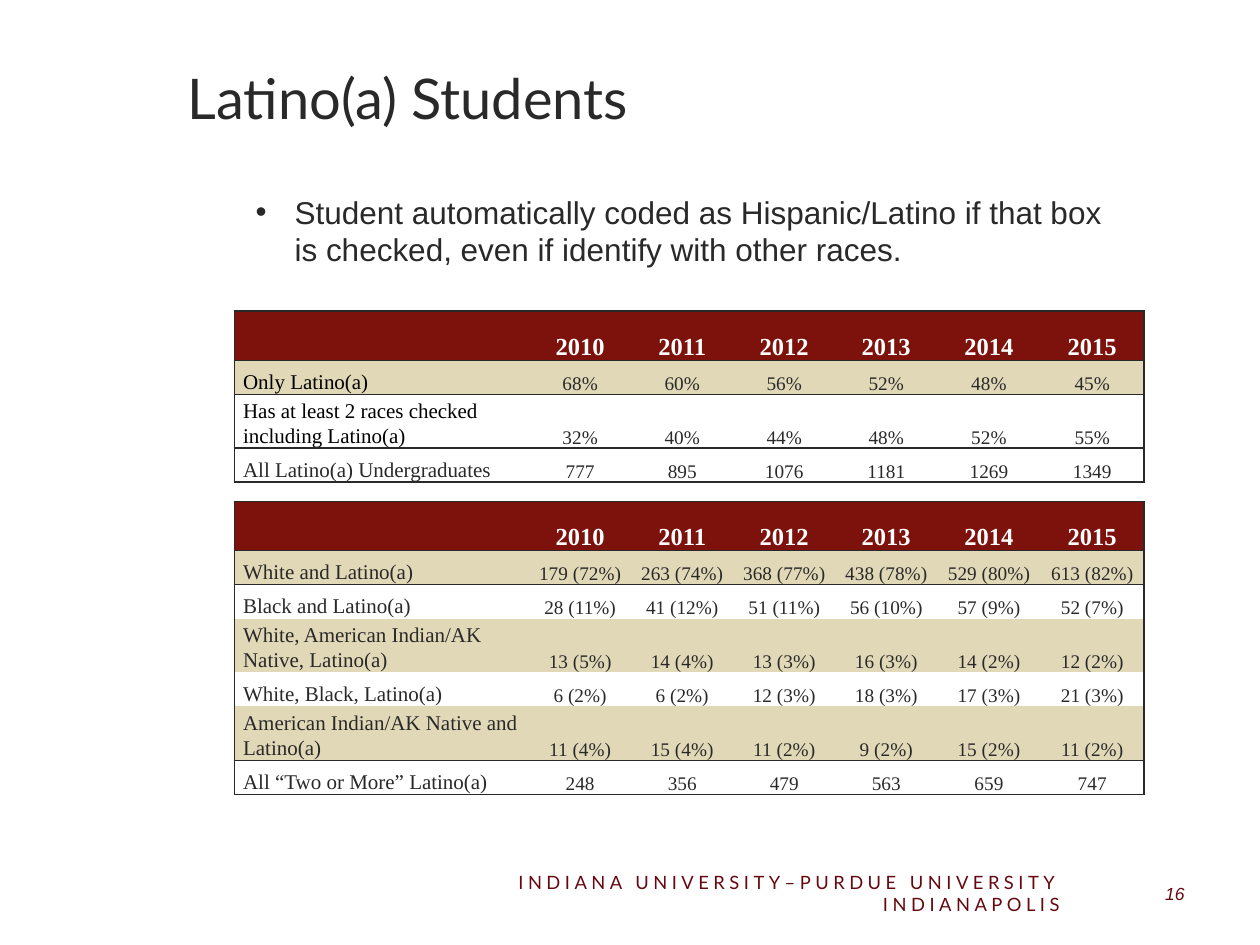
import pptx
import pptx.util
import pptx.dml.color
import pptx.enum.text
import pptx.oxml
import pptx.oxml.ns

Inches, Pt = pptx.util.Inches, pptx.util.Pt
RGBColor = pptx.dml.color.RGBColor
ALIGN, ANCHOR = pptx.enum.text.PP_ALIGN, pptx.enum.text.MSO_ANCHOR

INK = RGBColor(0x29, 0x29, 0x29)
BLACK = RGBColor(0, 0, 0)
WHITE = RGBColor(0xFF, 0xFF, 0xFF)
CRIMSON = RGBColor(0x7D, 0x11, 0x0C)
MAROON = RGBColor(0x66, 0x08, 0x0F)
TAN = RGBColor(0xE1, 0xD8, 0xB7)

TITLE = "Latino(a) Students"
BULLET = ("Student automatically coded as Hispanic/Latino if that box is checked, "
          "even if identify with other races.")
FOOTER = "INDIANA UNIVERSITY–PURDUE UNIVERSITY INDIANAPOLIS"
PAGE = "16"

HEADER = ["", "2010", "2011", "2012", "2013", "2014", "2015"]
ALL_LATINO = [
    HEADER,
    ["Only Latino(a)", "68%", "60%", "56%", "52%", "48%", "45%"],
    ["Has at least 2 races checked including Latino(a)",
     "32%", "40%", "44%", "48%", "52%", "55%"],
    ["All Latino(a) Undergraduates", "777", "895", "1076", "1181", "1269", "1349"],
]
TWO_OR_MORE = [
    HEADER,
    ["White and Latino(a)", "179 (72%)", "263 (74%)", "368 (77%)",
     "438 (78%)", "529 (80%)", "613 (82%)"],
    ["Black and Latino(a)", "28 (11%)", "41 (12%)", "51 (11%)",
     "56 (10%)", "57 (9%)", "52 (7%)"],
    ["White, American Indian/AK Native, Latino(a)", "13 (5%)", "14 (4%)", "13 (3%)",
     "16 (3%)", "14 (2%)", "12 (2%)"],
    ["White, Black, Latino(a)", "6 (2%)", "6 (2%)", "12 (3%)",
     "18 (3%)", "17 (3%)", "21 (3%)"],
    ["American Indian/AK Native and Latino(a)", "11 (4%)", "15 (4%)", "11 (2%)",
     "9 (2%)", "15 (2%)", "11 (2%)"],
    ["All “Two or More” Latino(a)", "248", "356", "479", "563", "659", "747"],
]
COLS = [2.34] + [0.81] * 4 + [0.82] * 2
HEADER_H, ROW_H = 0.39, 0.27
NO_STYLE = "{2D5ABB26-0587-4C30-8999-92F81FD0307C}"
NS = pptx.oxml.ns.nsdecls("a")


def xml(text):
    return pptx.oxml.parse_xml(text.replace(">", f" {NS}>", 1))


def write(tf, text, size, font, color, align=ALIGN.LEFT, anchor=ANCHOR.TOP,
          bold=False, italic=False, line=None):
    tf.word_wrap = True
    tf.vertical_anchor = anchor
    p = tf.paragraphs[0]
    p.alignment = align
    if line:
        p.line_spacing = line
    r = p.add_run()
    r.text = text
    r.font.size, r.font.name = Pt(size), font
    r.font.bold, r.font.italic = bold, italic
    r.font.color.rgb = color
    return p, r


def add_text(s, box, text, size, font, color, **fmt):
    sp = s.shapes.add_textbox(*map(Inches, box))
    return write(sp.text_frame, text, size, font, color, **fmt)


def add_borders(cell, sides):
    tcPr = cell._tc.get_or_add_tcPr()
    for side in "LRTB":
        if side in sides:
            tcPr.append(xml(f'<a:ln{side} w="12700"><a:solidFill><a:srgbClr val="{INK}"/>'
                            f'</a:solidFill></a:ln{side}>'))


def add_grid(s, top, rows, black_rows=()):
    last, end = len(rows) - 1, len(COLS) - 1
    heights = [HEADER_H] + [ROW_H] * last
    frame = s.shapes.add_table(len(rows), len(COLS), Inches(1.86), Inches(top),
                               Inches(sum(COLS)), Inches(sum(heights)))
    table = frame.table
    table._tbl.tblPr.find(pptx.oxml.ns.qn("a:tableStyleId")).text = NO_STYLE
    for col, width in zip(table.columns, COLS):
        col.width = Inches(width)
    for i, values in enumerate(rows):
        table.rows[i].height = Inches(heights[i])
        sides = ("T" if i in (0, 1, last) else "") + ("B" if i in (0, last - 1, last) else "")
        for j, value in enumerate(values):
            cell = table.cell(i, j)
            cell.margin_left = cell.margin_right = Inches(0.07)
            cell.margin_top = cell.margin_bottom = 0
            cell.vertical_anchor = ANCHOR.BOTTOM
            add_borders(cell, sides + ("L" if j == 0 else "") + ("R" if j == end else ""))
            if i == last:
                cell.fill.background()
            else:
                cell.fill.solid()
                cell.fill.fore_color.rgb = CRIMSON if i == 0 else TAN if i % 2 else WHITE
            if not value:
                continue
            color = WHITE if i == 0 else BLACK if j == 0 and i in black_rows else INK
            size = 14 if i == 0 else 11 if j else 12
            p, r = write(cell.text_frame, value, size, "Times New Roman", color,
                         align=ALIGN.CENTER if j else ALIGN.LEFT, anchor=ANCHOR.BOTTOM,
                         bold=i == 0, line=1.07)


def main():
    prs = pptx.Presentation()
    prs.slide_width, prs.slide_height = Inches(10), Inches(7.5)
    s = prs.slides.add_slide(prs.slide_layouts[6])

    p, r = add_text(s, (1.39, 0.3, 8.11, 0.94), TITLE, 32, "Lato", INK, anchor=ANCHOR.MIDDLE)
    fill = r.font._element.find(pptx.oxml.ns.qn("a:solidFill"))
    fill.addnext(xml('<a:effectLst><a:outerShdw blurRad="38100" dist="38100" dir="2700000">'
                     '<a:srgbClr val="000000"><a:alpha val="43000"/></a:srgbClr>'
                     '</a:outerShdw></a:effectLst>'))

    p, r = add_text(s, (1.93, 1.48, 7.04, 0.71), BULLET, 18, "Arial", INK)
    pPr = p._p.get_or_add_pPr()
    pPr.set("marL", str(Inches(0.31)))
    pPr.set("indent", str(-Inches(0.31)))
    pPr.append(xml('<a:buFont typeface="Arial"></a:buFont>'))
    pPr.append(xml('<a:buChar char="•"></a:buChar>'))

    add_grid(s, 2.47, ALL_LATINO, black_rows=(1, 2))
    add_grid(s, 3.98, TWO_OR_MORE)

    p, r = add_text(s, (3.69, 6.89, 4.82, 0.4), FOOTER, 10.5, "Lato", MAROON,
                    align=ALIGN.RIGHT, anchor=ANCHOR.MIDDLE)
    r.font._element.set("spc", "260")
    add_text(s, (8.6, 6.89, 0.9, 0.4), PAGE, 10, "Arial", MAROON,
             align=ALIGN.RIGHT, anchor=ANCHOR.MIDDLE, italic=True)
    prs.save("out.pptx")


if __name__ == "__main__":
    main()
